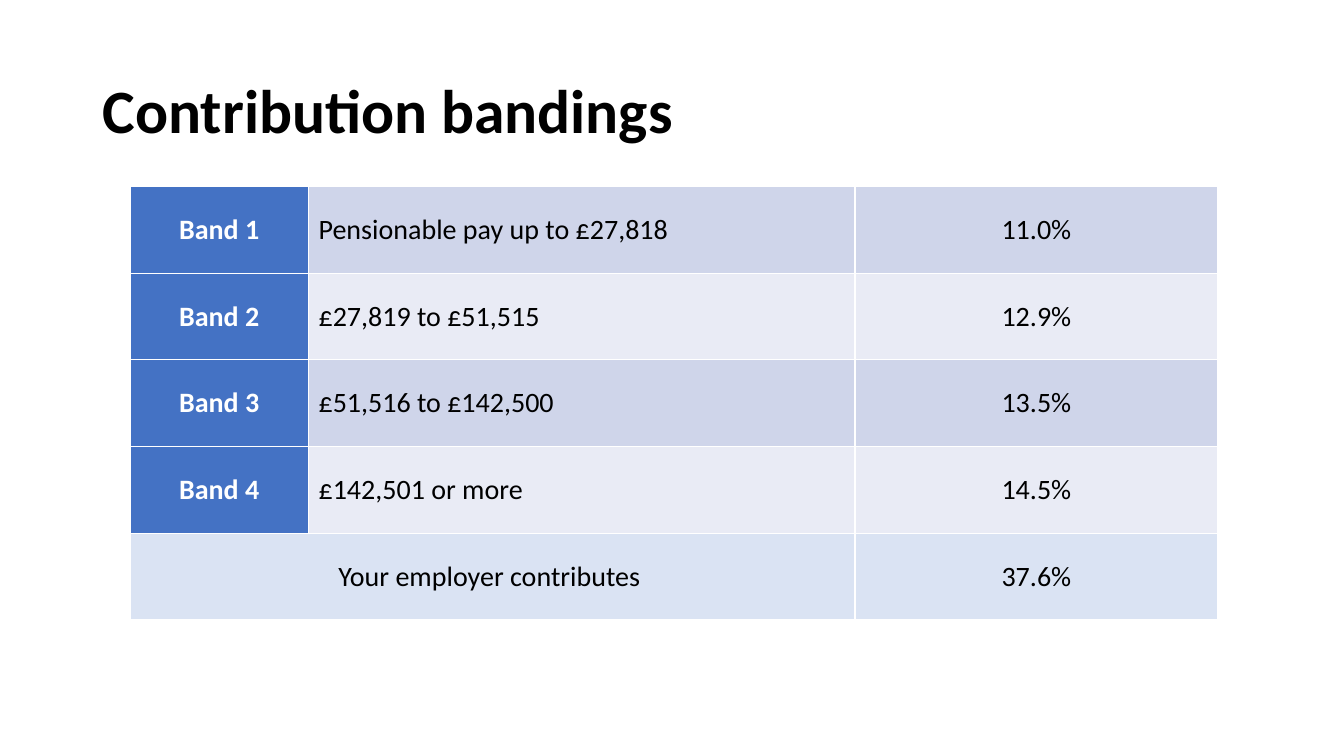
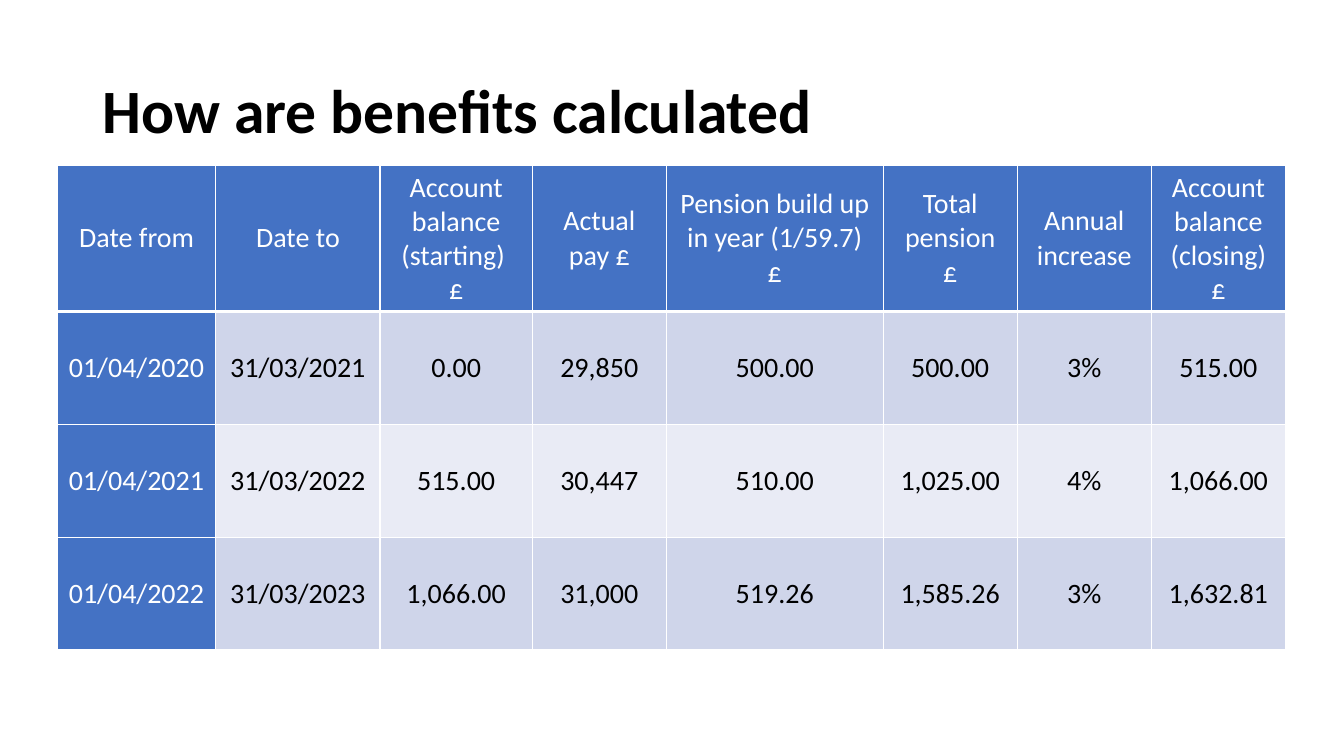
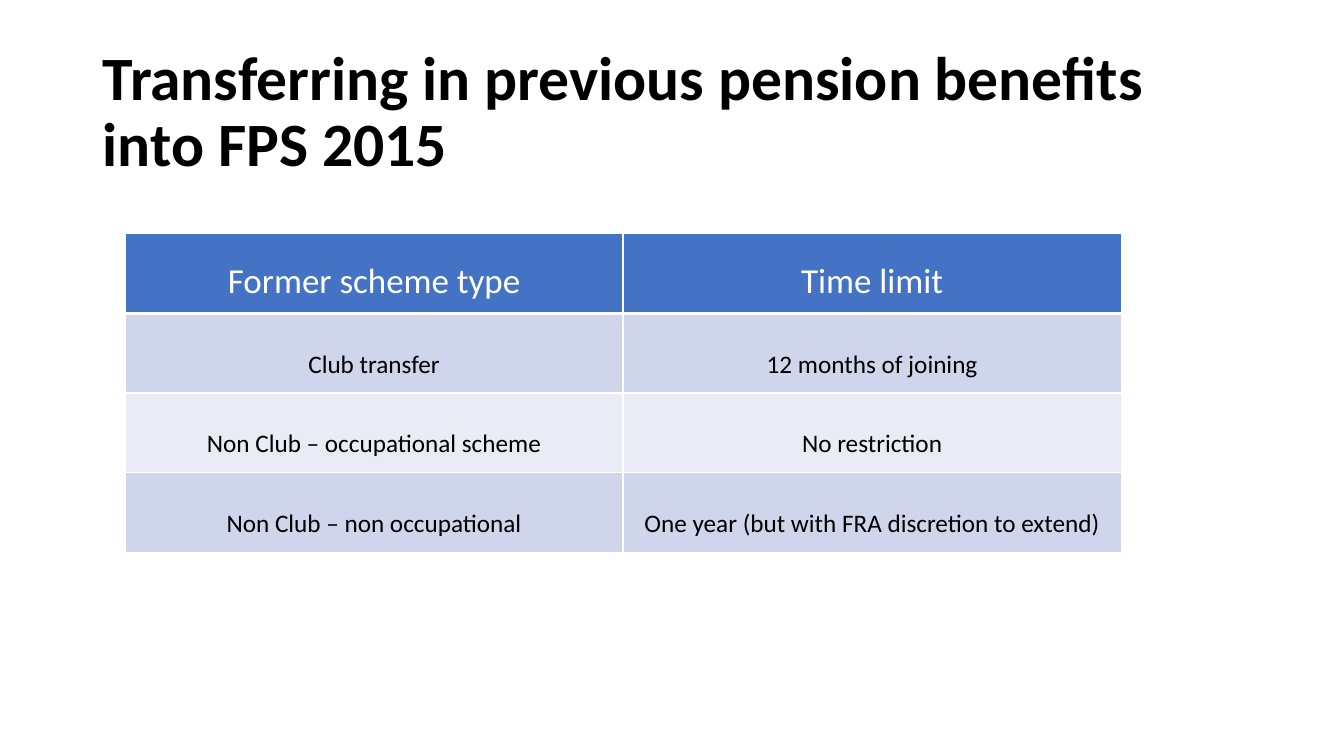
from lxml import etree
from pptx import Presentation
from pptx import util as u
from pptx.dml.color import RGBColor
from pptx.enum import text
from pptx.oxml import ns

FONT = "Calibri"
COLOURS = {
    "ink": "000000",
    "white": "FFFFFF",
    "head": "4472C4",
    "odd": "CFD5EA",
    "even": "E9EBF5",
    "total": "DAE3F3",
}
TITLE_BOX = (0.92, 0.4, 11.5, 1.45)
MIDDLE = text.MSO_ANCHOR.MIDDLE
TOP = text.MSO_ANCHOR.TOP
LEFT = text.PP_ALIGN.LEFT
CENTER = text.PP_ALIGN.CENTER

TITLE_FORMAT = {"size": 44, "bold": True, "colour": "ink", "spacing": 0.9}
BODY = {"size": 20, "bold": False, "colour": "ink", "align": CENTER, "fill": "odd"}
HEAD = {**BODY, "colour": "white", "fill": "head"}


def colour(name):
    return RGBColor.from_string(COLOURS[name])


def format_text(frame, style):
    for para in frame.paragraphs:
        para.alignment = style.get("align", LEFT)
        para.line_spacing = style.get("spacing", 1.0)
        for span in para.runs:
            values = {"name": FONT, "size": u.Pt(style["size"]), "bold": style["bold"]}
            for name, value in values.items():
                setattr(span.font, name, value)
            span.font.color.rgb = colour(style["colour"])


def add_title(page, wording):
    box = page.shapes.add_textbox(*map(u.Inches, TITLE_BOX))
    frame = box.text_frame
    frame.word_wrap = True
    frame.vertical_anchor = MIDDLE
    frame.paragraphs[0].text = wording
    format_text(frame, TITLE_FORMAT)


def add_borders(cell, bottom):
    """Draw white 1 pt edges, with the bottom edge in its own width."""
    properties = cell._tc.get_or_add_tcPr()
    for side, points in {"L": 1, "R": 1, "T": 1, "B": bottom}.items():
        line = etree.SubElement(properties, ns.qn(f"a:ln{side}"), w=str(u.Pt(points)))
        fill = etree.SubElement(line, ns.qn("a:solidFill"))
        etree.SubElement(fill, ns.qn("a:srgbClr"), val=COLOURS["white"])


def add_table(page, left, top, widths, heights, rows, style_of, anchor=MIDDLE, head_edge=1):
    """Fill a table; style_of(row, column) gives the format of each cell."""
    place = (left, top, sum(widths), sum(heights))
    frame = page.shapes.add_table(len(rows), len(widths), *map(u.Inches, place))
    table = frame.table
    table.first_row = table.horz_banding = False
    for column, width in zip(table.columns, widths):
        column.width = u.Inches(width)
    for row, height in zip(table.rows, heights):
        row.height = u.Inches(height)
    for r, row in enumerate(rows):
        for c, wording in enumerate(row):
            cell = table.cell(r, c)
            style = style_of(r, c)
            add_borders(cell, head_edge if r == 0 else 1)
            cell.fill.solid()
            cell.fill.fore_color.rgb = colour(style["fill"])
            cell.vertical_anchor = anchor
            cell.text_frame.text = wording
            format_text(cell.text_frame, style)
    return table


def band_fill(number):
    return "odd" if number % 2 else "even"


def add_bandings(page):
    rows = [
        ("Band 1", "Pensionable pay up to £27,818", "11.0%"),
        ("Band 2", "£27,819 to £51,515", "12.9%"),
        ("Band 3", "£51,516 to £142,500", "13.5%"),
        ("Band 4", "£142,501 or more", "14.5%"),
        ("Your employer contributes ", "", "37.6%"),
    ]
    total = len(rows) - 1

    def style_of(r, c):
        if r == total:
            return {**BODY, "fill": "total"}
        if c == 0:
            return {**HEAD, "bold": True}
        return {**BODY, "fill": band_fill(r + 1), "align": LEFT if c == 1 else CENTER}

    add_title(page, "Contribution bandings")
    table = add_table(page, 1.29, 1.85, [1.77, 5.42, 3.6], [0.86] * 5, rows, style_of)
    table.cell(total, 0).merge(table.cell(total, 1))


def add_calculation(page):
    rows = [
        ("Date from", "Date to", "Account balance (starting) \n£", "Actual pay £",
         "Pension build up in year (1/59.7)\n£", "Total pension\n£", "Annual increase",
         "Account balance (closing)\n£"),
        ("01/04/2020", "31/03/2021", "0.00", "29,850", "500.00", "500.00", "3%", "515.00"),
        ("01/04/2021", "31/03/2022", "515.00", "30,447", "510.00", "1,025.00", "4%", "1,066.00"),
        ("01/04/2022", "31/03/2023", "1,066.00", "31,000", "519.26", "1,585.26", "3%", "1,632.81"),
    ]
    widths = [1.57, 1.63, 1.51, 1.33, 2.15] + [1.33] * 3

    def style_of(r, c):
        return HEAD if r == 0 or c == 0 else {**BODY, "fill": band_fill(r)}

    add_title(page, "How are benefits calculated")
    add_table(page, 0.57, 1.64, widths, [1.45] + [1.12] * 3, rows, style_of, head_edge=3)


def add_transfers(page):
    rows = [
        ("Former scheme type", "Time limit"),
        ("Club transfer", "12 months of joining"),
        ("Non Club – occupational scheme", "No restriction"),
        ("Non Club – non occupational", "One year (but with FRA discretion to extend)"),
    ]

    def style_of(r, c):
        if r == 0:
            return {**HEAD, "size": 25, "spacing": 1.5}
        return {**BODY, "size": 18, "spacing": 2.0, "fill": band_fill(r)}

    add_title(page, "Transferring in previous pension benefits \ninto FPS 2015")
    add_table(page, 1.24, 2.32, [4.94] * 2, [0.79] * 4, rows, style_of, TOP, head_edge=3)


def main():
    deck = Presentation()
    deck.slide_width, deck.slide_height = u.Inches(13.33), u.Inches(7.5)
    for build in (add_bandings, add_calculation, add_transfers):
        build(deck.slides.add_slide(deck.slide_layouts[6]))
    deck.save("out.pptx")


if __name__ == "__main__":
    main()
